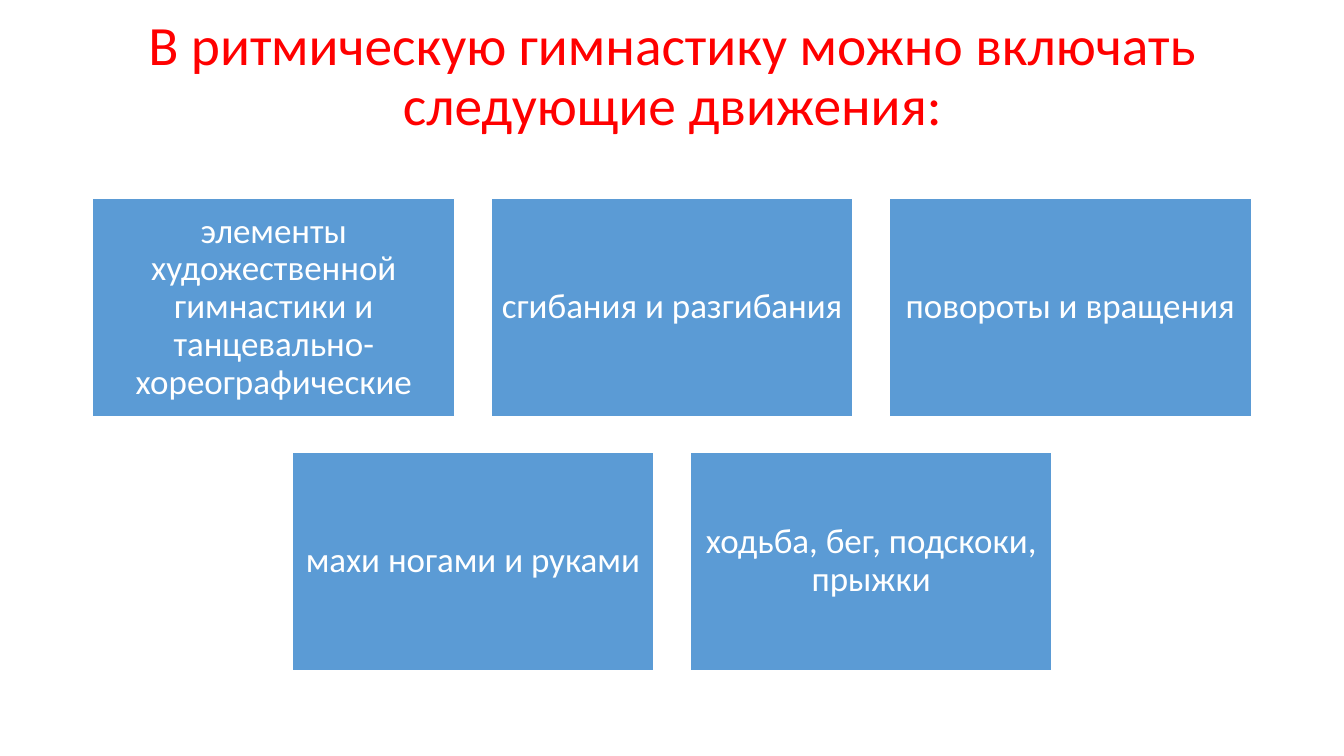
import dataclasses
from typing import Any

import pptx
import pptx.dml.color
import pptx.enum.shapes
import pptx.enum.text
import pptx.slide
import pptx.util

Inches = pptx.util.Inches
Pt = pptx.util.Pt

COLORS = {"heading": "FF0000", "card": "5B9BD5", "white": "FFFFFF"}
SLIDE_WIDTH, SLIDE_HEIGHT = 13.33, 7.5
CARD_WIDTH, CARD_HEIGHT = 3.59, 2.16
GAP = 0.36
FIRST_ROW_TOP = 1.97

HEADING = "В ритмическую гимнастику можно включать следующие движения:"
MOVEMENT_ROWS = [
    [
        "элементы художественной гимнастики и танцевально-хореографические",
        "сгибания и разгибания",
        "повороты и вращения",
    ],
    ["махи ногами и руками", "ходьба, бег, подскоки, прыжки"],
]


@dataclasses.dataclass
class MovementCard:
    label: str
    left: float
    top: float


def rgb(name: str) -> pptx.dml.color.RGBColor:
    return pptx.dml.color.RGBColor.from_string(COLORS[name])


def apply_format(target: Any, values: dict[str, Any]) -> None:
    for attribute, value in values.items():
        setattr(target, attribute, value)


def write_text(shape: Any, text: str, size: float, color: str, inset: float) -> None:
    frame = shape.text_frame
    frame.text = text
    apply_format(frame, {
        "word_wrap": True,
        "auto_size": pptx.enum.text.MSO_AUTO_SIZE.NONE,
        "vertical_anchor": pptx.enum.text.MSO_ANCHOR.MIDDLE,
        "margin_left": Inches(inset),
        "margin_right": Inches(inset),
        "margin_top": Inches(inset),
        "margin_bottom": Inches(inset),
    })
    paragraph = frame.paragraphs[0]
    apply_format(paragraph, {
        "alignment": pptx.enum.text.PP_ALIGN.CENTER,
        "line_spacing": 0.9,
        "space_before": Pt(0),
    })
    font = paragraph.runs[0].font
    apply_format(font, {"name": "Calibri", "size": Pt(size)})
    font.color.rgb = rgb(color)


def layout_cards() -> list[MovementCard]:
    """Centre each row of cards on the slide."""
    cards = []
    for row, labels in enumerate(MOVEMENT_ROWS):
        row_width = len(labels) * (CARD_WIDTH + GAP) - GAP
        row_left = (SLIDE_WIDTH - row_width) / 2
        top = FIRST_ROW_TOP + row * (CARD_HEIGHT + GAP)
        for column, label in enumerate(labels):
            left = row_left + column * (CARD_WIDTH + GAP)
            cards.append(MovementCard(label, left, top))
    return cards


def draw_card(slide: pptx.slide.Slide, card: MovementCard) -> None:
    box = slide.shapes.add_shape(
        pptx.enum.shapes.MSO_SHAPE.RECTANGLE,
        Inches(card.left), Inches(card.top),
        Inches(CARD_WIDTH), Inches(CARD_HEIGHT),
    )
    box.shadow.inherit = False
    box.fill.solid()
    box.fill.fore_color.rgb = rgb("card")
    box.line.color.rgb = rgb("white")
    box.line.width = Pt(1)
    write_text(box, card.label, 25, "white", 0.09)


def main() -> None:
    presentation = pptx.Presentation()
    presentation.slide_width = Inches(SLIDE_WIDTH)
    presentation.slide_height = Inches(SLIDE_HEIGHT)
    slide = presentation.slides.add_slide(presentation.slide_layouts[5])

    # Heading
    heading = slide.shapes.title
    apply_format(heading, {
        "left": Inches(0.92),
        "top": Inches(0.4),
        "width": Inches(11.5),
        "height": Inches(0.74),
    })
    write_text(heading, HEADING, 39.6, "heading", 0.05)

    # Movement cards
    for card in layout_cards():
        draw_card(slide, card)

    presentation.save("out.pptx")


if __name__ == "__main__":
    main()
